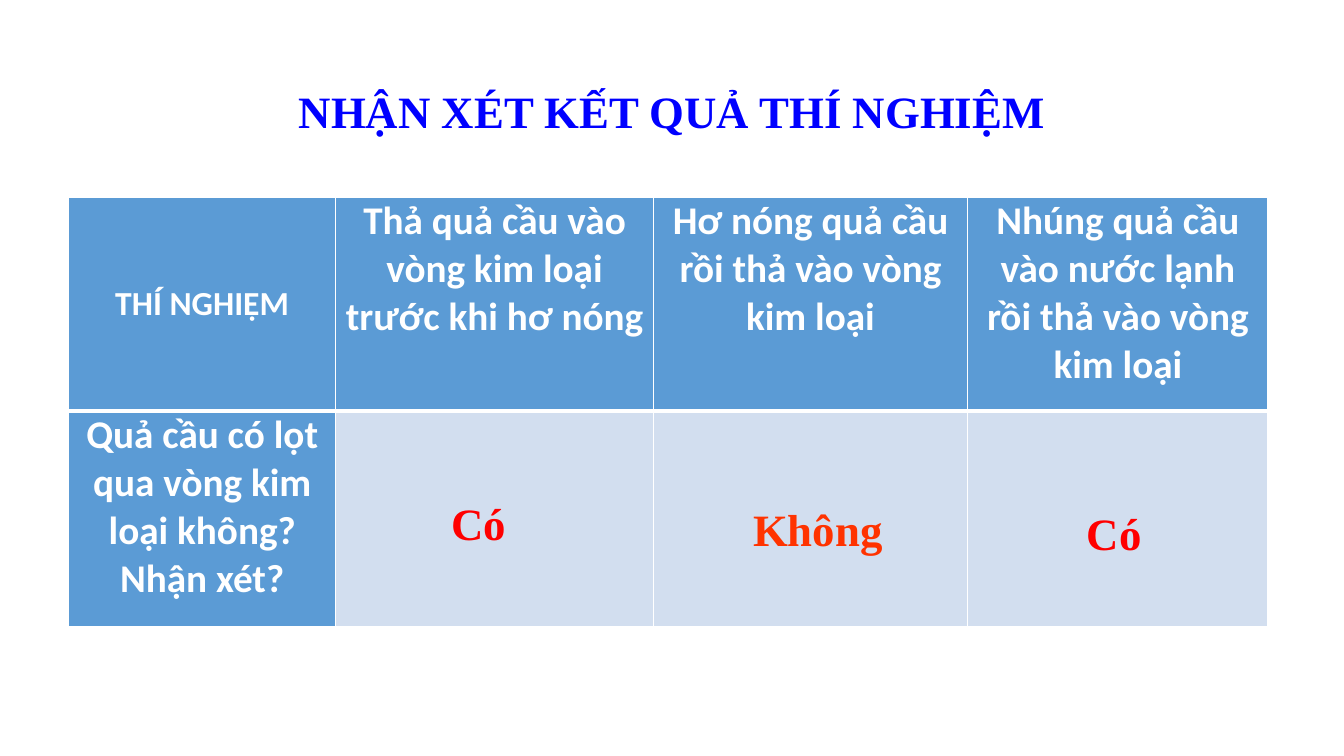
from dataclasses import dataclass

from lxml.etree import SubElement
from pptx import Presentation
from pptx.dml.color import RGBColor
from pptx.enum.text import MSO_ANCHOR, MSO_AUTO_SIZE, PP_ALIGN
from pptx.oxml.ns import qn
from pptx.slide import Slide
from pptx.table import _Cell
from pptx.text.text import _Paragraph
from pptx.util import Pt

WHITE = "FFFFFF"
HEADER_BLUE = "5B9BD5"
ANSWER_BLUE = "D2DEEF"
COLUMN_WIDTHS = (190.8, 226.8, 224.6, 214.6)
ROW_HEIGHTS = (152.6, 154.1)
TABLE_LEFT, TABLE_TOP = 49, 141.1
QUESTIONS = (
    (
        "THÍ NGHIỆM",
        "Thả quả cầu vào vòng kim loại trước khi hơ nóng",
        "Hơ nóng quả cầu rồi thả vào vòng kim loại",
        "Nhúng quả cầu vào nước lạnh rồi thả vào vòng kim loại",
    ),
    ("Quả cầu có lọt qua vòng kim loại không? Nhận xét?", "", "", ""),
)


@dataclass
class Label:
    text: str
    left: float
    top: float
    width: float
    height: float
    color: str
    align: PP_ALIGN = PP_ALIGN.CENTER
    anchor: MSO_ANCHOR = MSO_ANCHOR.TOP
    auto_size: MSO_AUTO_SIZE = MSO_AUTO_SIZE.SHAPE_TO_FIT_TEXT
    line_spacing: float = 1.0


LABELS = (
    Label("NHẬN XÉT KẾT QUẢ THÍ NGHIỆM", 120, 52, 720, 59, "0000FF",
          anchor=MSO_ANCHOR.MIDDLE, auto_size=MSO_AUTO_SIZE.NONE, line_spacing=0.9),
    Label("Có", 315.4, 350.6, 78, 45.6, "FF0000", align=PP_ALIGN.LEFT),
    Label("Có ", 761, 358, 78, 46, "FF0000"),
    Label("Không", 516.2, 355, 136, 46, "FF3300"),
)


def rgb(color: str) -> RGBColor:
    return RGBColor.from_string(color)


def style_paragraph(paragraph: _Paragraph, font_name: str, size: float,
                    color: str, align: PP_ALIGN) -> None:
    paragraph.alignment = align
    for run in paragraph.runs:
        run.font.name = font_name
        run.font.size = Pt(size)
        run.font.bold = True
        run.font.color.rgb = rgb(color)


def add_borders(cell: _Cell, top: float, bottom: float) -> None:
    """Draw white cell borders; the left and right ones are 1 pt wide."""
    properties = cell._tc.get_or_add_tcPr()
    for side, width in (("L", 1), ("R", 1), ("T", top), ("B", bottom)):
        line = SubElement(properties, qn(f"a:ln{side}"), w=str(Pt(width)))
        solid = SubElement(line, qn("a:solidFill"))
        SubElement(solid, qn("a:srgbClr"), val=WHITE)


def fill_cell(cell: _Cell, text: str, is_corner: bool) -> None:
    cell.fill.solid()
    cell.fill.fore_color.rgb = rgb(HEADER_BLUE if text else ANSWER_BLUE)
    cell.margin_left = cell.margin_right = Pt(5)
    cell.margin_top = cell.margin_bottom = Pt(0)
    if not text:
        return
    cell.text_frame.text = text
    paragraph = cell.text_frame.paragraphs[0]
    paragraph.space_before = Pt(6)
    paragraph.space_after = Pt(0 if is_corner else 6)
    if is_corner:
        cell.vertical_anchor = MSO_ANCHOR.MIDDLE
    style_paragraph(paragraph, "Calibri", 24 if is_corner else 28, WHITE, PP_ALIGN.CENTER)


def add_experiment_table(slide: Slide) -> None:
    table = slide.shapes.add_table(
        len(ROW_HEIGHTS), len(COLUMN_WIDTHS), Pt(TABLE_LEFT), Pt(TABLE_TOP),
        Pt(sum(COLUMN_WIDTHS)), Pt(sum(ROW_HEIGHTS))).table
    for column, width in zip(table.columns, COLUMN_WIDTHS):
        column.width = Pt(width)
    for row, height in zip(table.rows, ROW_HEIGHTS):
        row.height = Pt(height)
    for row_index, questions in enumerate(QUESTIONS):
        top, bottom = (1, 3) if row_index == 0 else (3, 1)
        for column_index, question in enumerate(questions):
            cell = table.cell(row_index, column_index)
            add_borders(cell, top, bottom)
            fill_cell(cell, question, is_corner=row_index == column_index == 0)


def add_label(slide: Slide, label: Label) -> None:
    frame = slide.shapes.add_textbox(
        Pt(label.left), Pt(label.top), Pt(label.width), Pt(label.height)).text_frame
    frame.word_wrap = True
    frame.auto_size = label.auto_size
    frame.vertical_anchor = label.anchor
    frame.text = label.text
    paragraph = frame.paragraphs[0]
    paragraph.line_spacing = label.line_spacing
    style_paragraph(paragraph, "Times New Roman", 32, label.color, label.align)


def main() -> None:
    presentation = Presentation()
    presentation.slide_width = Pt(960)
    presentation.slide_height = Pt(540)
    slide = presentation.slides.add_slide(presentation.slide_layouts[6])
    add_experiment_table(slide)
    for label in LABELS:
        add_label(slide, label)
    presentation.save("out.pptx")


if __name__ == "__main__":
    main()
